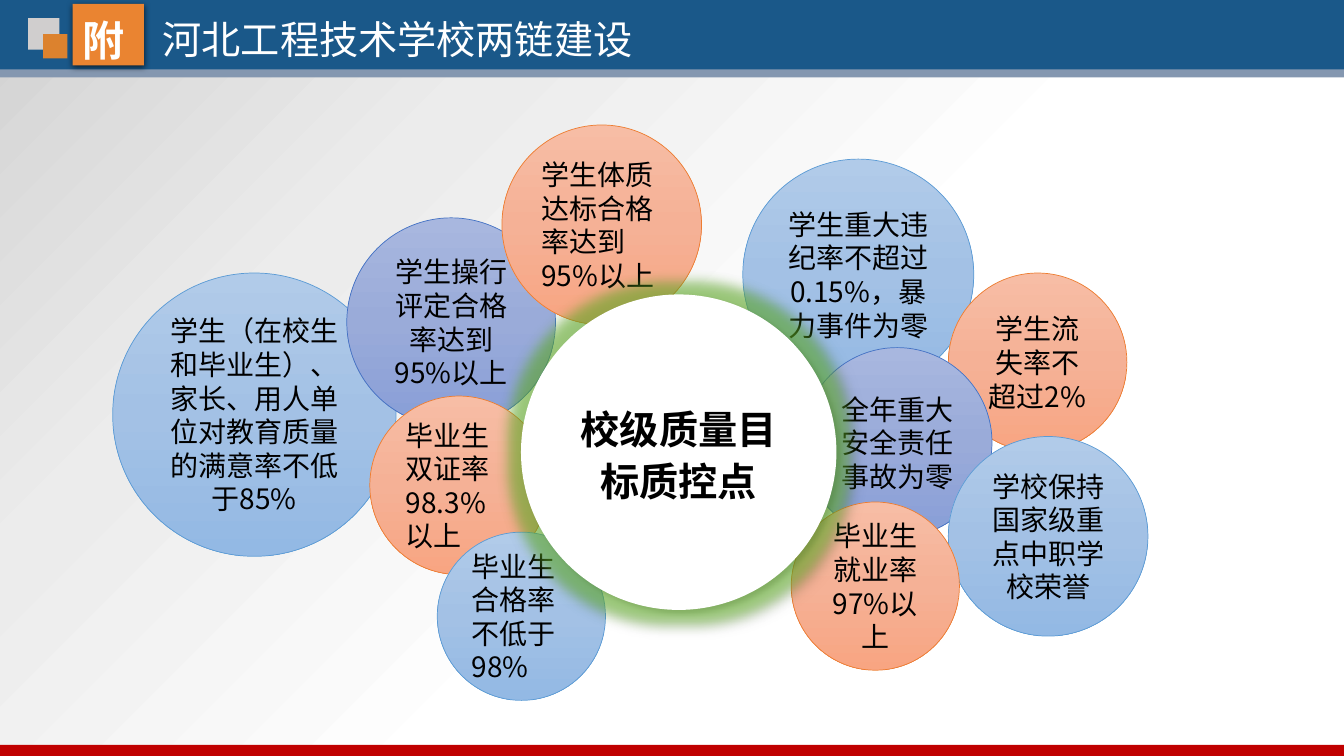
from dataclasses import dataclass

from lxml.etree import SubElement
from pptx import Presentation
from pptx.dml.color import RGBColor
from pptx.enum.shapes import MSO_SHAPE as Preset
from pptx.enum.text import MSO_ANCHOR as Anchor, PP_ALIGN as Align
from pptx.oxml.ns import qn
from pptx.util import Cm, Pt


@dataclass(frozen=True)
class Theme:
    font: str = "Noto Sans CJK SC"
    black: str = "000000"
    white: str = "FFFFFF"
    header: str = "1A5889"
    strip: str = "8497B0"
    pale_square: str = "D0CECE"
    dark_square: str = "DC822E"
    badge: str = "EA8431"
    footer: str = "C00000"
    glow: str = "6BC42A"
    bubble_size: int = 20
    title_size: int = 28
    badge_size: int = 30


THEME = Theme()
WIDTH, HEIGHT = 33.87, 19.05

# Gradient stops as (percent, colour)
BACKDROP = ((0, "D2D2D2"), (27, "ECECEC"), (57, "FFFFFF"))

# Bubble styles as (outline, gradient stops)
BLUE = ("5B9BD5", ((0, "B1CBE9"), (50, "A3C1E5"), (100, "93B9E4")))
VIOLET = ("4472C4", ((0, "A8B7DF"), (50, "9AABD9"), (100, "889ED7")))
ORANGE = ("ED7D31", ((0, "F7BDA5"), (50, "F5B196"), (100, "F8A582")))

# Quality targets from back to front: left, top, diameter, style, alignment, text
TARGETS = (
    (2.84, 6.88, 7.14, BLUE, Align.CENTER, "学生（在校生和毕业生）、家长、用人单位对教育质量的满意率不低于85%"),
    (8.74, 5.49, 5.26, VIOLET, Align.CENTER, "学生操行评定合格率达到95%以上"),
    (12.65, 3.15, 5.03, ORANGE, Align.LEFT, "学生体质达标合格率达到95%以上"),
    (18.72, 4.01, 5.82, BLUE, Align.CENTER, "学生重大违纪率不超过0.15%，暴力事件为零"),
    (23.9, 6.88, 4.5, ORANGE, Align.CENTER, "学生流失率不超过2%"),
    (20.22, 8.76, 4.78, VIOLET, Align.CENTER, "全年重大安全责任事故为零"),
    (9.32, 9.98, 4.5, ORANGE, Align.LEFT, "毕业生双证率98.3%以上"),
    (11.02, 13.41, 4.24, BLUE, Align.LEFT, "毕业生合格率不低于98%"),
    (23.9, 11, 5.03, BLUE, Align.CENTER, "学校保持国家级重点中职学校荣誉"),
    (19.94, 12.65, 4.24, ORANGE, Align.CENTER, "毕业生就业率97%以上"),
)


def add_color(parent, color, alpha=100):
    element = SubElement(parent, qn("a:srgbClr"), val=color)
    if alpha < 100:
        SubElement(element, qn("a:alpha"), val=str(alpha * 1000))


def add_plain(slide, preset, left, top, width, height, color):
    shape = slide.shapes.add_shape(preset, Cm(left), Cm(top), Cm(width), Cm(height))
    shape.shadow.inherit = False
    shape.fill.solid()
    shape.fill.fore_color.rgb = RGBColor.from_string(color)
    shape.line.fill.background()
    return shape


def set_gradient(shape, stops, angle):
    solid = shape._element.spPr.find(qn("a:solidFill"))
    gradient = solid.makeelement(qn("a:gradFill"), {"rotWithShape": "1"})
    stop_list = SubElement(gradient, qn("a:gsLst"))
    for percent, color in stops:
        add_color(SubElement(stop_list, qn("a:gs"), pos=str(percent * 1000)), color)
    SubElement(gradient, qn("a:lin"), ang=str(angle * 60000), scaled="0")
    solid.getparent().replace(solid, gradient)


def add_glow(shape, color, radius, alpha):
    effects = shape._element.spPr.find(qn("a:effectLst"))
    add_color(SubElement(effects, qn("a:glow"), rad=str(Pt(radius))), color, alpha)


def add_shadow(shape, blur, distance, angle, alpha):
    effects = shape._element.spPr.find(qn("a:effectLst"))
    shadow = SubElement(effects, qn("a:outerShdw"), blurRad=str(Pt(blur)),
                        dist=str(Pt(distance)), dir=str(angle * 60000), rotWithShape="0")
    add_color(shadow, THEME.black, alpha)


def write_text(shape, text, size, color, leading, align=Align.CENTER,
               anchor=Anchor.MIDDLE, bold=False):
    frame = shape.text_frame
    frame.word_wrap = True
    frame.vertical_anchor = anchor
    paragraph = frame.paragraphs[0]
    paragraph.alignment = align
    paragraph.line_spacing = Pt(leading)
    run = paragraph.add_run()
    run.text = text
    run.font.size = Pt(size)
    run.font.bold = bold
    run.font.name = THEME.font
    run.font.color.rgb = RGBColor.from_string(color)
    SubElement(run.font._element, qn("a:ea"), typeface=THEME.font)


def add_bubble(slide, left, top, diameter, style, align, text):
    outline, stops = style
    bubble = add_plain(slide, Preset.OVAL, left, top, diameter, diameter, THEME.white)
    set_gradient(bubble, stops, 90)
    bubble.line.color.rgb = RGBColor.from_string(outline)
    bubble.line.width = Pt(0.5)
    write_text(bubble, text, THEME.bubble_size, THEME.black, 24, align)


def add_hub(slide):
    hub = add_plain(slide, Preset.OVAL, 13.13, 7.42, 7.95, 7.95, THEME.white)
    add_glow(hub, THEME.glow, 18, 50)
    add_shadow(hub, 4, 3, 45, 40)
    write_text(hub, "校级质量目标质控点", THEME.title_size, THEME.black, 37, bold=True)


def add_header(slide):
    for left, top, width, height, color in (
        (0, 0, WIDTH, 1.93, THEME.header),
        (0, 1.75, WIDTH, 0.2, THEME.strip),
        (0.71, 0.46, 0.79, 0.79, THEME.pale_square),
        (1.09, 0.86, 0.61, 0.61, THEME.dark_square),
    ):
        add_plain(slide, Preset.RECTANGLE, left, top, width, height, color)

    title = slide.shapes.add_textbox(Cm(2.72), Cm(0.18), Cm(14.6), Cm(1.65))
    write_text(title, "河北工程技术学校两链建设", THEME.title_size, THEME.white, 36,
               anchor=Anchor.TOP)

    badge = add_plain(slide, Preset.RECTANGLE, 1.83, 0.1, 1.8, 1.55, THEME.badge)
    add_shadow(badge, 4.5, 1.5, 90, 63)
    badge.text_frame.margin_top = badge.text_frame.margin_bottom = 0
    write_text(badge, "附", THEME.badge_size, THEME.white, 43, Align.LEFT, bold=True)


def main():
    presentation = Presentation()
    presentation.slide_width, presentation.slide_height = Cm(WIDTH), Cm(HEIGHT)
    slide = presentation.slides.add_slide(presentation.slide_layouts[6])

    # Backdrop
    backdrop = add_plain(slide, Preset.RECTANGLE, 0, 0, WIDTH, HEIGHT, THEME.white)
    set_gradient(backdrop, BACKDROP, 45)

    # Targets around the hub
    for target in TARGETS:
        add_bubble(slide, *target)
    add_hub(slide)

    # Header and footer
    add_header(slide)
    add_plain(slide, Preset.RECTANGLE, 0, 18.77, WIDTH, 0.28, THEME.footer)

    presentation.save("out.pptx")


if __name__ == "__main__":
    main()
